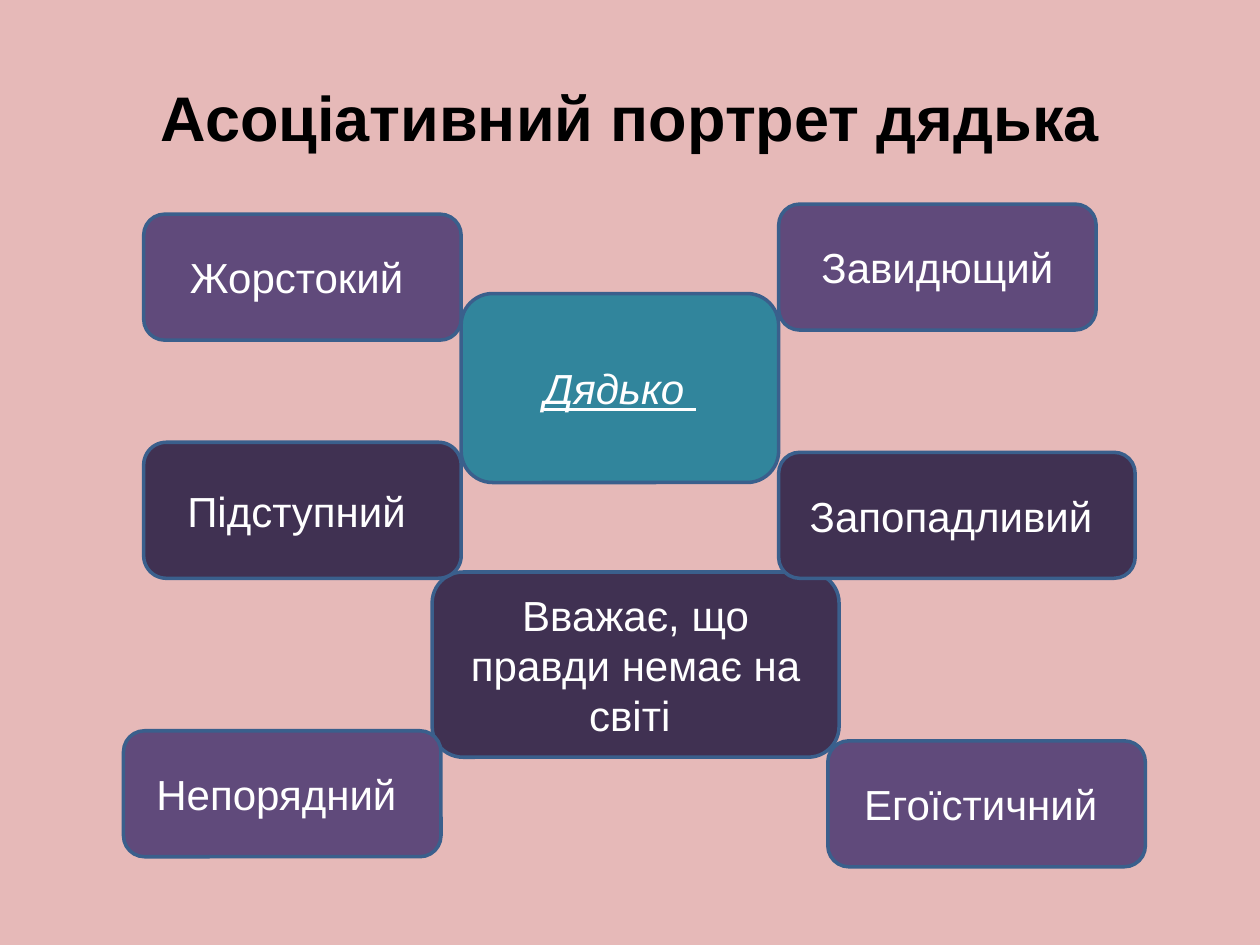
from pptx import Presentation
from pptx.dml.color import RGBColor
from pptx.enum.shapes import MSO_SHAPE
from pptx.enum.text import MSO_ANCHOR, PP_ALIGN
from pptx.util import Inches, Pt

FONT = "Arial"
PINK = RGBColor(0xE6, 0xB9, 0xB8)
PURPLE = RGBColor(0x60, 0x4A, 0x7B)
DARK_PURPLE = RGBColor(0x40, 0x31, 0x52)
TEAL = RGBColor(0x31, 0x85, 0x9C)
OUTLINE = RGBColor(0x3A, 0x5F, 0x8C)
BLACK = RGBColor(0, 0, 0)
WHITE = RGBColor(0xFF, 0xFF, 0xFF)

TRAITS = [
    ("Жорстокий ", (1.14, 1.7, 2.52, 1), PURPLE),
    ("Егоїстичний ", (6.57, 5.88, 2.52, 1), PURPLE),
    ("Вважає, що правди немає на світі ", (3.43, 4.54, 3.23, 1.47), DARK_PURPLE),
    ("Підступний ", (1.14, 3.51, 2.52, 1.08), DARK_PURPLE),
    ("Непорядний ", (0.98, 5.8, 2.52, 1), PURPLE),
    ("Запопадливий ", (6.18, 3.59, 2.83, 1), DARK_PURPLE),
    ("Завидющий", (6.18, 1.62, 2.52, 1), PURPLE),
]


def set_text(shape, text, size, color):
    """Write one centred paragraph and return it."""
    tf = shape.text_frame
    tf.text = text
    tf.word_wrap = True
    tf.vertical_anchor = MSO_ANCHOR.MIDDLE
    p = tf.paragraphs[0]
    p.alignment = PP_ALIGN.CENTER
    p.font.name = FONT
    p.font.size = Pt(size)
    p.font.color.rgb = color
    return p


def add_title(slide, text, box):
    """Place the title placeholder in the box."""
    title = slide.shapes.title
    title.left, title.top, title.width, title.height = map(Inches, box)
    p = set_text(title, text, 36, BLACK)
    p.font.bold = True


def add_card(slide, text, box, fill):
    """Add a rounded card and return its paragraph."""
    sp = slide.shapes.add_shape(MSO_SHAPE.ROUNDED_RECTANGLE, *map(Inches, box))
    sp.shadow.inherit = False
    sp.fill.solid()
    sp.fill.fore_color.rgb = fill
    sp.line.color.rgb = OUTLINE
    sp.line.width = Pt(2)
    return set_text(sp, text, 24, WHITE)


def add_portrait(slide):
    """Add the trait cards and the central character card."""
    for text, box, fill in TRAITS:
        add_card(slide, text, box, fill)
    p = add_card(slide, "Дядько ", (3.66, 2.33, 2.52, 1.5), TEAL)
    p.font.italic = True
    p.font.underline = True


def main():
    """Build and save the slide."""
    prs = Presentation()
    prs.slide_width, prs.slide_height = Inches(10), Inches(7.5)
    slide = prs.slides.add_slide(prs.slide_layouts[5])
    slide.background.fill.solid()
    slide.background.fill.fore_color.rgb = PINK
    add_title(slide, "Асоціативний портрет дядька", (0.5, 0.3, 9, 1.25))
    add_portrait(slide)
    prs.save("out.pptx")


if __name__ == "__main__":
    main()
